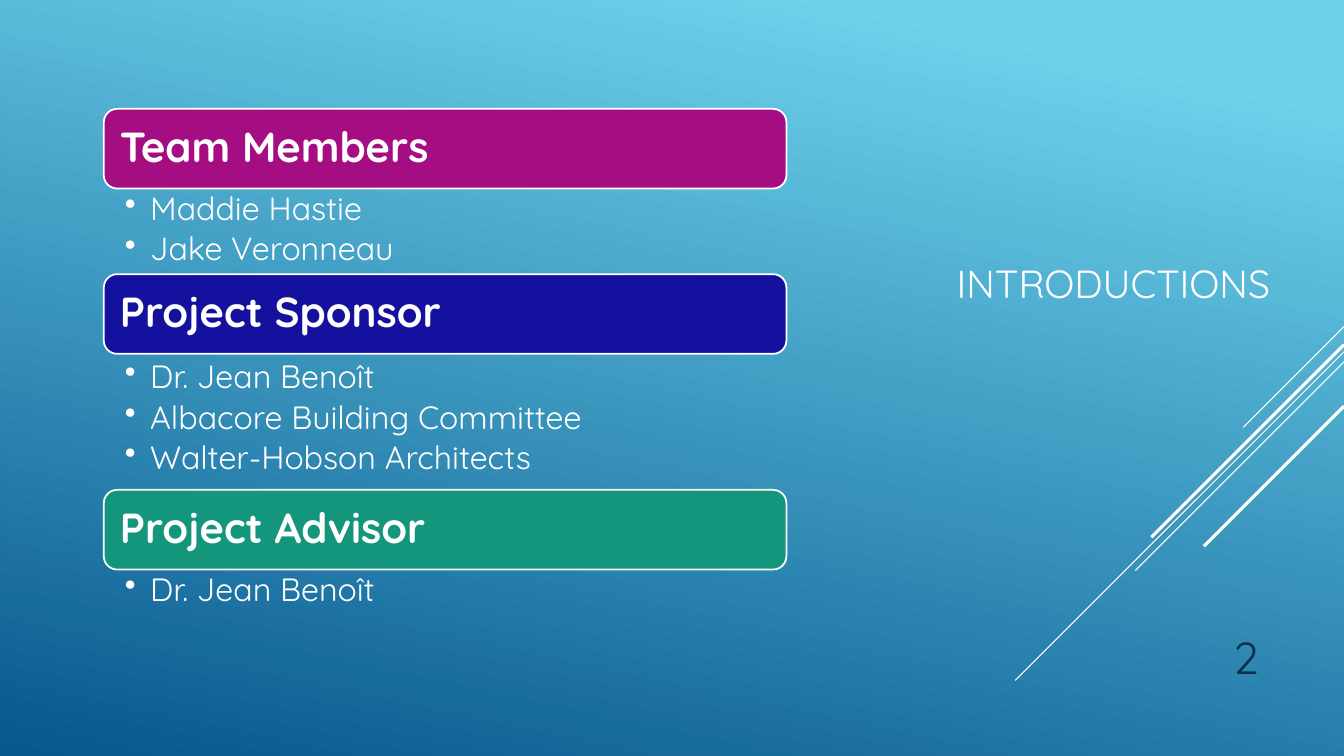
"""Build the introductions slide with team, sponsor and advisor blocks."""
from lxml import etree
from pptx import Presentation
from pptx import util as u
from pptx.dml import color
from pptx.enum import shapes, text
from pptx.oxml import ns

FONT = "Quicksand"
WHITE = "FFFFFF"


def rgb(value):
    return color.RGBColor.from_string(value)


def add_run(paragraph, words, size, hue=WHITE, bold=False):
    run = paragraph.add_run()
    run.text = words
    run.font.name = FONT
    run.font.size = u.Pt(size)
    run.font.bold = bold
    run.font.color.rgb = rgb(hue)


presentation = Presentation()
presentation.slide_width = u.Inches(13.33)
presentation.slide_height = u.Inches(7.5)
slide = presentation.slides.add_slide(presentation.slide_layouts[6])

backdrop = slide.shapes.add_shape(
    shapes.MSO_SHAPE.RECTANGLE, 0, 0, presentation.slide_width, presentation.slide_height)
backdrop.shadow.inherit = False
backdrop.line.fill.background()
backdrop.fill.gradient()
backdrop.fill.gradient_angle = 258
for stop, (position, hue) in zip(backdrop.fill.gradient_stops, [(0.1, "6ED2EB"), (1, "06588E")]):
    stop.position = position
    stop.color.rgb = rgb(hue)

number_box = slide.shapes.add_textbox(u.Inches(11.33), u.Inches(6.1), u.Inches(1.25), u.Inches(0.73))
number_box.text_frame.word_wrap = True
number_box.text_frame.vertical_anchor = text.MSO_ANCHOR.BOTTOM
paragraph = number_box.text_frame.paragraphs[0]
paragraph.alignment = text.PP_ALIGN.RIGHT
paragraph.space_after = u.Pt(6)
add_run(paragraph, "2", 32, "0A304A")

RIGHT_EDGE = 13.33
diagonals = [(3.24, 1, 0.75), (3.49, 3.26, 0.75), (3.59, 2.07, 0.75), (3.42, 1.91, 2.25), (4.03, 1.39, 2.25)]
for top, reach, weight in diagonals:
    diagonal = slide.shapes.add_connector(
        shapes.MSO_CONNECTOR.STRAIGHT, u.Inches(RIGHT_EDGE), u.Inches(top),
        u.Inches(RIGHT_EDGE - reach), u.Inches(top + reach))
    diagonal.line.color.rgb = rgb(WHITE)
    diagonal.line.width = u.Pt(weight)
    etree.SubElement(diagonal._element.spPr, ns.qn("a:effectLst"))

title_box = slide.shapes.add_textbox(u.Inches(9.39), u.Inches(1.03), u.Inches(3.33), u.Inches(3.55))
title_box.text_frame.word_wrap = True
title_box.text_frame.vertical_anchor = text.MSO_ANCHOR.MIDDLE
add_run(title_box.text_frame.paragraphs[0], "INTRODUCTIONS", 28)

LEFT, WIDTH, BAR_HEIGHT = u.Inches(1.03), u.Inches(6.77), u.Inches(0.79)
sections = [
    ("Team Members", "A50E82", 1.08, 1.87, 0.88, ["Maddie Hastie", "Jake Veronneau"]),
    ("Project Sponsor", "13119D", 2.72, 3.54, 1.32,
     ["Dr. Jean Benoît", "Albacore Building Committee", "Walter-Hobson Architects"]),
    ("Project Advisor", "14967C", 4.86, 5.65, 0.54, ["Dr. Jean Benoît"]),
]
for heading, hue, bar_top, list_top, list_height, names in sections:
    bar = slide.shapes.add_shape(
        shapes.MSO_SHAPE.ROUNDED_RECTANGLE, LEFT, u.Inches(bar_top), WIDTH, BAR_HEIGHT)
    bar.shadow.inherit = False
    bar.fill.solid()
    bar.fill.fore_color.rgb = rgb(hue)
    bar.line.color.rgb = rgb(WHITE)
    bar.line.width = u.Pt(1.25)
    frame = bar.text_frame
    frame.word_wrap = True
    frame.vertical_anchor = text.MSO_ANCHOR.MIDDLE
    frame.margin_left = frame.margin_right = u.Inches(0.12)
    paragraph = frame.paragraphs[0]
    paragraph.alignment = text.PP_ALIGN.LEFT
    paragraph.line_spacing = 0.9
    add_run(paragraph, heading, 30, bold=True)

    name_list = slide.shapes.add_textbox(LEFT, u.Inches(list_top), WIDTH, u.Inches(list_height))
    frame = name_list.text_frame
    frame.word_wrap = True
    frame.margin_left, frame.margin_right = u.Inches(0.21), u.Inches(0.23)
    frame.margin_top = frame.margin_bottom = u.Inches(0.04)
    for index, name in enumerate(names):
        paragraph = frame.add_paragraph() if index else frame.paragraphs[0]
        properties = paragraph._p.get_or_add_pPr()
        properties.set("marL", str(u.Inches(0.25)))
        properties.set("indent", str(-u.Inches(0.25)))
        etree.SubElement(properties, ns.qn("a:buChar"), char="•")
        paragraph.line_spacing = 0.9
        paragraph.space_after = u.Pt(4)
        add_run(paragraph, name, 23)

presentation.save("out.pptx")
